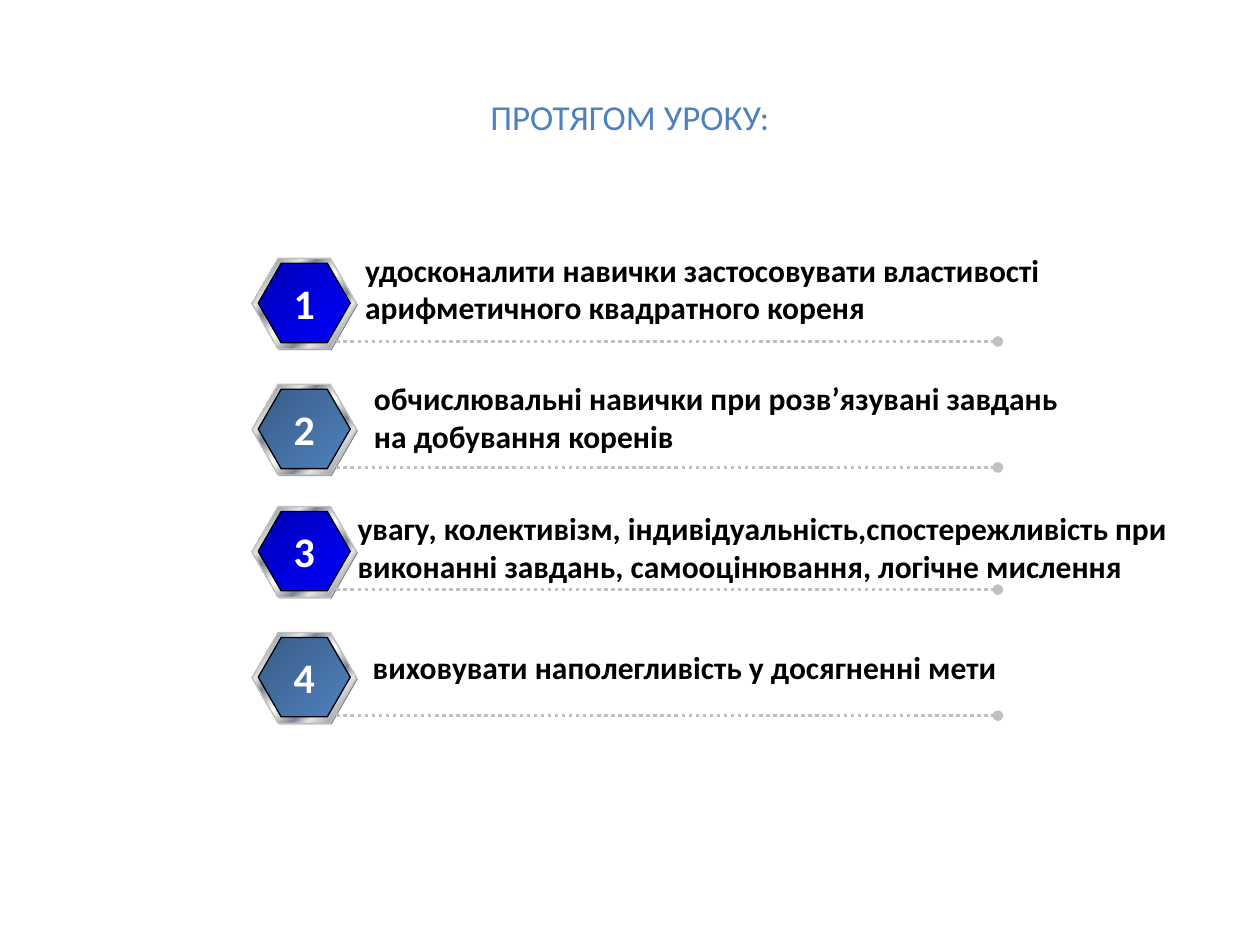
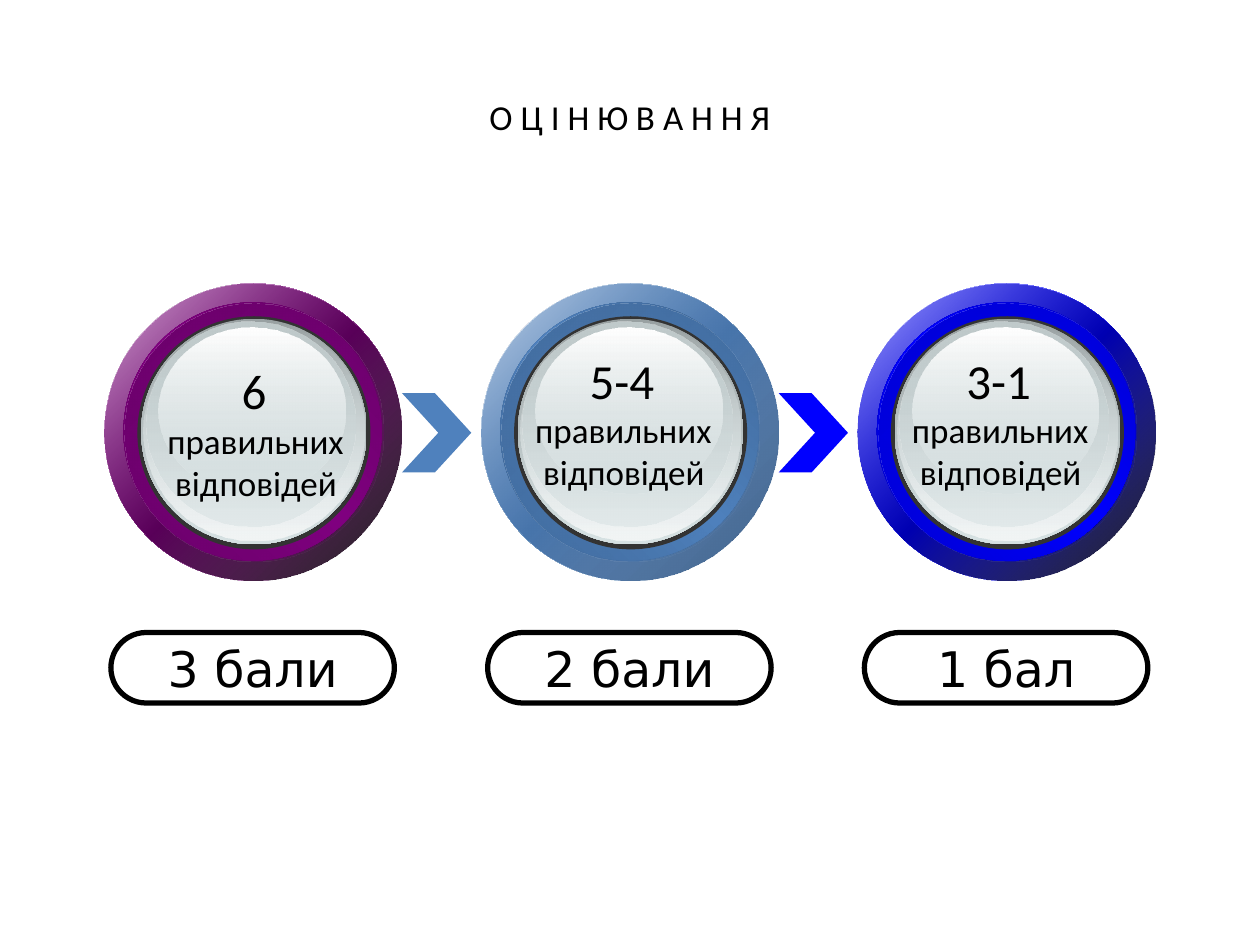
import dataclasses

import lxml.etree
import pptx
import pptx.dml.color
import pptx.enum.dml
import pptx.enum.shapes
import pptx.enum.text
import pptx.oxml.ns
import pptx.util

Inches = pptx.util.Inches
SHAPES = pptx.enum.shapes.MSO_SHAPE
ALIGN = pptx.enum.text.PP_ALIGN
ANCHOR = pptx.enum.text.MSO_ANCHOR


@dataclasses.dataclass(frozen=True)
class Theme:
    font: str = "Calibri"
    badge_font: str = "DejaVu Sans"
    black: str = "000000"
    white: str = "FFFFFF"
    steel: str = "4F81BD"
    deep_steel: str = "395C87"
    blue: str = "0000FF"
    purple: str = "800080"
    silver: str = "C0C0C0"
    shade: str = "808080"
    charcoal: str = "333333"
    glass: str = "D6E1E2"
    title_size: int = 20
    goal_size: int = 18
    number_size: int = 24
    score_size: int = 28
    caption_size: int = 20


THEME = Theme()

METAL = [(0, "E6E6E6"), (7, "7D8496"), (26, "E6E6E6"), (34, "7D8496"),
         (46, "E6E6E6"), (50, "FFFFFF"), (54, "E6E6E6"), (66, "7D8496"),
         (74, "E6E6E6"), (93, "7D8496"), (100, "E6E6E6")]
BLUE_FACE = [(0, "0000B6"), (100, THEME.blue)]
STEEL_FACE = [(0, THEME.deep_steel), (100, THEME.steel)]

GOALS = [
    (2.05, BLUE_FACE, (2.8, 1.94, 6.93, 0.7),
     "удосконалити навички застосовувати властивості арифметичного квадратного кореня"),
    (3.05, STEEL_FACE, (2.87, 2.96, 5.63, 0.7),
     "обчислювальні навички при розв’язувані завдань на добування коренів"),
    (4.02, BLUE_FACE, (2.74, 3.99, 7.26, 0.7),
     "увагу, колективізм, індивідуальність,спостережливість при виконанні завдань, "
     "самооцінювання, логічне мислення"),
    (5.02, STEEL_FACE, (2.86, 5.09, 6.13, 0.4),
     "виховувати наполегливість у досягненні мети"),
]

GLASS_LAYERS = [
    (0.29, 0.28, 1.79, 1.79, [(0, "99A1A2"), (100, THEME.glass)]),
    (0.31, 0.29, 1.75, 1.75, [(0, THEME.glass, 0), (100, "F2F5F5")]),
    (0.33, 0.30, 1.66, 1.63, [(0, "C1CBCC"), (100, THEME.glass, 48)]),
    (0.43, 0.35, 1.48, 1.32, [(0, THEME.white), (100, THEME.glass, 38)]),
]


@dataclasses.dataclass(frozen=True)
class Grade:
    answers: str
    points: str
    colour: str
    rim_end: tuple
    band: str
    glow: str
    caption_left: float
    caption_top: float


GRADES = [
    Grade("6 ", "3 бали", THEME.purple, (100, THEME.black, 90),
          "620062", "690069", 1.14, 2.81),
    Grade("5-4 ", "2 бали", THEME.steel, (100, THEME.deep_steel),
          "3C6391", "416A9B", 4.06, 2.73),
    Grade("3-1 ", "1 бал", THEME.blue, (100, THEME.black, 90),
          "0000C3", "0000D1", 7.05, 2.73),
]
DIAL_LEFT, DIAL_TOP, DIAL_STEP, DIAL_SIZE = 0.83, 2.25, 2.99, 2.36


def rgb(colour):
    return pptx.dml.color.RGBColor.from_string(colour)


def add_child(parent, tag, **attributes):
    values = {name: str(value) for name, value in attributes.items()}
    return lxml.etree.SubElement(parent, pptx.oxml.ns.qn(tag), values)


def fill_gradient(shape, stops, angle):
    shape.fill.background()
    properties = shape._element.spPr
    empty_fill = properties.find(pptx.oxml.ns.qn("a:noFill"))
    gradient = add_child(properties, "a:gradFill", rotWithShape=1)
    stop_list = add_child(gradient, "a:gsLst")
    for position, colour, *opacity in stops:
        stop = add_child(stop_list, "a:gs", pos=position * 1000)
        paint = add_child(stop, "a:srgbClr", val=colour)
        if opacity:
            add_child(paint, "a:alpha", val=opacity[0] * 1000)
    add_child(gradient, "a:lin", ang=angle * 60000, scaled=0)
    properties.replace(empty_fill, gradient)


def add_figure(slide, kind, place, fill=None, angle=45, line=None, adjust=None):
    shape = slide.shapes.add_shape(kind, *map(Inches, place))
    shape.shadow.inherit = False
    if adjust is not None:
        shape.adjustments[0] = adjust
    if fill is None:
        shape.fill.background()
    elif isinstance(fill, str):
        shape.fill.solid()
        shape.fill.fore_color.rgb = rgb(fill)
    else:
        fill_gradient(shape, fill, angle)
    if line is None:
        shape.line.fill.background()
    else:
        colour, width = line
        shape.line.color.rgb = rgb(colour)
        shape.line.width = pptx.util.Pt(width)
    return shape


def add_span(para, text, size, colour=THEME.black, font=THEME.font, bold=False):
    span = para.add_run()
    span.text = text
    span.font.name = font
    span.font.size = pptx.util.Pt(size)
    span.font.color.rgb = rgb(colour)
    span.font.bold = bold


def add_text(slide, place, lines, align=ALIGN.LEFT, anchor=ANCHOR.TOP,
             wrap=True, **style):
    frame = slide.shapes.add_textbox(*map(Inches, place)).text_frame
    frame.word_wrap = wrap
    frame.vertical_anchor = anchor
    for index, spans in enumerate(lines):
        para = frame.add_paragraph() if index else frame.paragraphs[0]
        para.alignment = align
        for text, size in spans:
            add_span(para, text, size, **style)


def add_title(slide, text, colour):
    add_text(slide, (0.5, 0.3, 9, 1.25), [[(text, THEME.title_size)]],
             ALIGN.CENTER, ANCHOR.MIDDLE, colour=colour)


def add_dotted_rule(slide, top):
    rule = slide.shapes.add_connector(
        pptx.enum.shapes.MSO_CONNECTOR.STRAIGHT,
        Inches(2.67), Inches(top), Inches(7.92), Inches(top))
    rule.line.color.rgb = rgb(THEME.silver)
    rule.line.width = pptx.util.Pt(2)
    rule.line.dash_style = pptx.enum.dml.MSO_LINE.ROUND_DOT
    properties = rule._element.spPr
    add_child(rule.line._get_or_add_ln(), "a:tailEnd", type="oval")
    add_child(properties, "a:effectLst")


def add_goal(slide, number, top, face, place, text):
    hexagons = [
        ((2.01, top + 0.01, 0.83, 0.72), THEME.shade, None),
        ((2, top, 0.83, 0.72), METAL, (THEME.silver, 0.75)),
        ((2.05, top + 0.04, 0.73, 0.63), face, (THEME.black, 0.75)),
    ]
    for hexagon_place, fill, line in hexagons:
        add_figure(slide, SHAPES.HEXAGON, hexagon_place, fill, line=line, adjust=0.289)
    add_dotted_rule(slide, top + 0.66)
    add_text(slide, place, [[(text, THEME.goal_size)]], bold=True)
    add_text(slide, (2.22, top + 0.1, 0.39, 0.5), [[(str(number), THEME.number_size)]],
             ALIGN.CENTER, wrap=False, colour=THEME.white, bold=True)


def add_dial(slide, left, grade):
    rim = [(0, THEME.white), (50, grade.colour), (100, THEME.white)]
    rim_shade = [(0, grade.colour, 32), grade.rim_end]
    band = [(0, grade.band), (50, grade.colour), (100, grade.band)]
    glow = [(0, grade.glow), (100, grade.colour, 0)]
    rings = [(0, DIAL_SIZE, rim, 45), (0, DIAL_SIZE, rim_shade, 45),
             (0.15, 2.05, band, 315), (0.16, 2.05, glow, 45),
             (0.26, 1.85, THEME.charcoal, 0)]
    for inset, size, fill, angle in rings:
        add_figure(slide, SHAPES.OVAL, (left + inset, DIAL_TOP + inset, size, size),
                   fill, angle)
    for across, down, width, height, stops in GLASS_LAYERS:
        add_figure(slide, SHAPES.OVAL, (left + across, DIAL_TOP + down, width, height),
                   stops, 90)


def add_badge(slide, left, text):
    badge = add_figure(slide, SHAPES.ROUNDED_RECTANGLE, (left, 5.02, 2.25, 0.56),
                       line=(THEME.black, 3), adjust=0.5)
    frame = badge.text_frame
    frame.word_wrap = False
    frame.vertical_anchor = ANCHOR.MIDDLE
    para = frame.paragraphs[0]
    para.alignment = ALIGN.CENTER
    add_span(para, text, THEME.score_size, font=THEME.badge_font)


def add_grade(slide, left, grade):
    add_dial(slide, left, grade)
    add_badge(slide, left + 0.05, grade.points)
    caption = [[(grade.answers, THEME.score_size)],
               [("правильних ", THEME.caption_size)],
               [("відповідей", THEME.caption_size), (" ", THEME.goal_size)]]
    add_text(slide, (grade.caption_left, grade.caption_top, 1.84, 1.23),
             caption, ALIGN.CENTER)


def build_goals(page):
    add_title(page, "ПРОТЯГОМ УРОКУ:", THEME.steel)
    for number, goal in enumerate(GOALS, 1):
        add_goal(page, number, *goal)


def build_grading(page):
    add_title(page, "О Ц І Н Ю В А Н Н Я", THEME.black)
    lefts = [DIAL_LEFT + DIAL_STEP * index for index in range(len(GRADES))]
    for left, colour in zip(lefts, (THEME.steel, THEME.blue)):
        add_figure(page, SHAPES.CHEVRON, (left + DIAL_SIZE, 3.12, 0.55, 0.63),
                   colour, adjust=0.525)
    for left, grade in zip(lefts, GRADES):
        add_grade(page, left, grade)


def main():
    deck = pptx.Presentation()
    deck.slide_width = Inches(10)
    deck.slide_height = Inches(7.5)
    for build in (build_goals, build_grading):
        build(deck.slides.add_slide(deck.slide_layouts[6]))
    deck.save("out.pptx")


if __name__ == "__main__":
    main()
